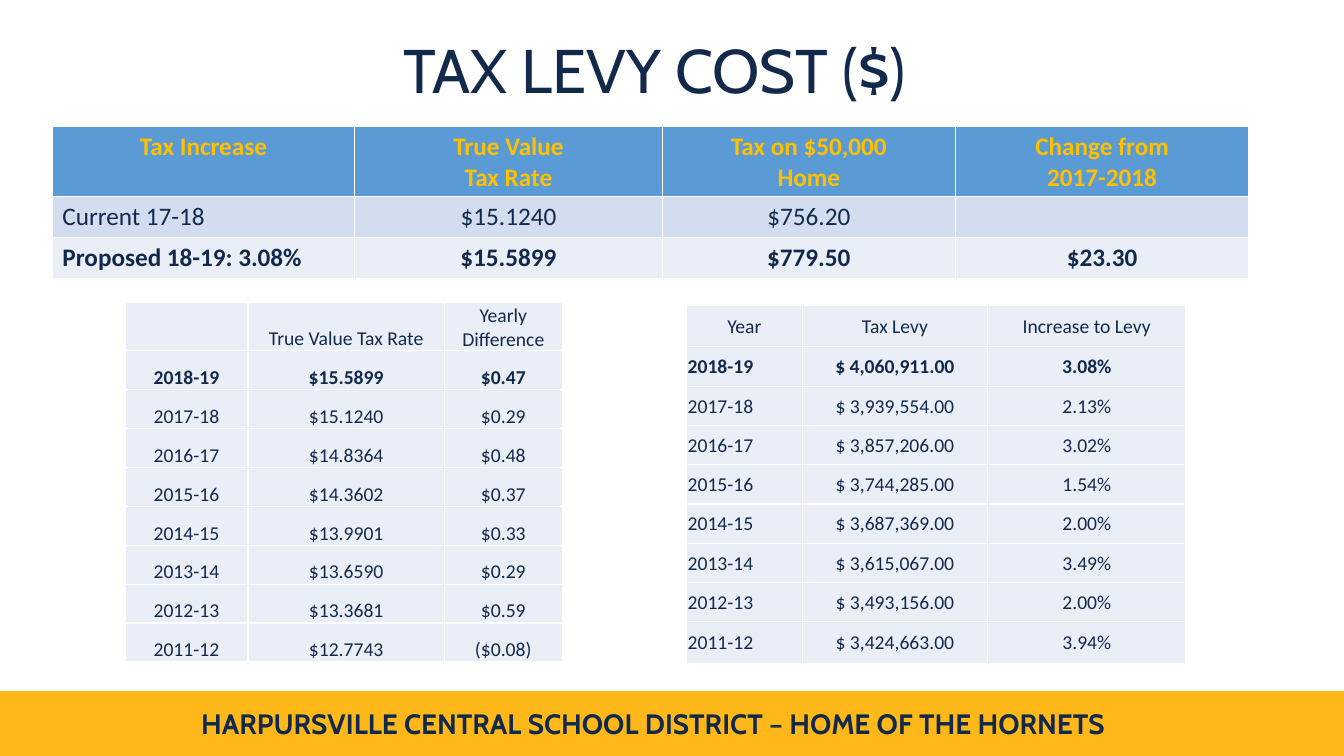
"""Tax levy cost slide with one summary table and two history tables."""
from dataclasses import dataclass

from pptx import Presentation
from pptx.dml.color import RGBColor
from pptx.enum.shapes import MSO_SHAPE
from pptx.enum.text import MSO_ANCHOR, PP_ALIGN
from pptx.util import Cm, Pt


@dataclass(frozen=True)
class Theme:
    navy: str = "13294B"
    gold: str = "FFB819"
    amber: str = "FFC000"
    blue: str = "5B9BD5"
    band: str = "D2DEEF"
    pale: str = "EAEFF7"
    white: str = "FFFFFF"
    head: str = "Cabin"
    body: str = "Calibri"
    title: int = 44
    foot: int = 20
    main: int = 18
    small: int = 14


THEME = Theme()

COSTS = [
    ("Tax Increase", "True Value\nTax Rate", "Tax on $50,000\nHome", "Change from\n2017-2018"),
    ("Current 17-18", "$15.1240", "$756.20", ""),
    ("Proposed 18-19: 3.08%", "$15.5899", "$779.50", "$23.30"),
]
RATES = [
    ("", "True Value Tax Rate", "Yearly Difference"),
    ("2018-19", "$15.5899", "$0.47"),
    ("2017-18", "$15.1240", "$0.29"),
    ("2016-17", "$14.8364", "$0.48"),
    ("2015-16", "$14.3602", "$0.37"),
    ("2014-15", "$13.9901", "$0.33"),
    ("2013-14", "$13.6590", "$0.29"),
    ("2012-13", "$13.3681", "$0.59"),
    ("2011-12", "$12.7743", "($0.08)"),
]
LEVIES = [
    ("Year", "Tax Levy", "Increase to Levy"),
    ("2018-19", "$ 4,060,911.00", "3.08%"),
    ("2017-18", "$ 3,939,554.00", "2.13%"),
    ("2016-17", "$ 3,857,206.00", "3.02%"),
    ("2015-16", "$ 3,744,285.00", "1.54%"),
    ("2014-15", "$ 3,687,369.00", "2.00%"),
    ("2013-14", "$ 3,615,067.00", "3.49%"),
    ("2012-13", "$ 3,493,156.00", "2.00%"),
    ("2011-12", "$ 3,424,663.00", "3.94%"),
]


def color(code):
    return RGBColor.from_string(code)


def style(frame, face, size, ink, bold=False, align=PP_ALIGN.CENTER):
    for para in frame.paragraphs:
        para.alignment = align
        for run in para.runs:
            font = run.font
            font.name, font.size, font.bold = face, Pt(size), bold
            font.color.rgb = color(ink)


def add_block(slide, place, fill, line=None):
    block = slide.shapes.add_shape(MSO_SHAPE.RECTANGLE, *map(Cm, place))
    block.shadow.inherit = False
    block.fill.solid()
    block.fill.fore_color.rgb = color(fill)
    if line:
        block.line.color.rgb = color(line)
        block.line.width = Pt(1)
    else:
        block.line.fill.background()
    return block


def add_title(slide, text):
    frame = add_block(slide, (1.9, 0.53, 29.21, 2.64), THEME.white).text_frame
    frame.word_wrap = True
    frame.vertical_anchor = MSO_ANCHOR.MIDDLE
    frame.text = text
    frame.paragraphs[0].line_spacing = 0.9
    style(frame, THEME.head, THEME.title, THEME.navy)


def add_footer(slide, text):
    add_block(slide, (0, 17.43, 33.87, 1.6), THEME.gold, THEME.gold)
    frame = slide.shapes.add_textbox(Cm(4.47), Cm(17.68), Cm(23.98), Cm(1.11)).text_frame
    frame.word_wrap = True
    frame.text = text
    style(frame, THEME.head, THEME.foot, THEME.navy, True)


def add_grid(slide, spot, wide, high, data):
    """Add an unstyled grid and return its table."""
    shape = slide.shapes.add_table(len(data), len(wide), *map(Cm, (*spot, sum(wide), sum(high))))
    table = shape.table
    table.horz_banding = False
    for col, width in zip(table.columns, wide):
        col.width = Cm(width)
    for row, height, texts in zip(table.rows, high, data):
        row.height = Cm(height)
        for cell, text in zip(row.cells, texts):
            cell.text_frame.text = text
            cell.fill.solid()
            cell.fill.fore_color.rgb = color(THEME.pale)
    return table


def add_costs(slide):
    table = add_grid(slide, (1.32, 3.18), (7.62, 7.75, 7.39, 7.39), (1.78, 1.03, 1.03), COSTS)
    fills = (THEME.blue, THEME.band, THEME.pale)
    for index, (row, fill) in enumerate(zip(table.rows, fills)):
        for place, cell in enumerate(row.cells):
            cell.fill.fore_color.rgb = color(fill)
            ink = THEME.navy if index else THEME.amber
            align = PP_ALIGN.LEFT if index and not place else PP_ALIGN.CENTER
            style(cell.text_frame, THEME.body, THEME.main, ink, index != 1, align)


def add_years(slide, spot, wide, high, data, anchor, first):
    """Add a history table whose latest year is bold."""
    table = add_grid(slide, spot, wide, high, data)
    table.first_row = False
    for index, row in enumerate(table.rows):
        for place, cell in enumerate(row.cells):
            cell.margin_left = cell.margin_right = cell.margin_top = Cm(0.03)
            cell.margin_bottom = 0
            cell.vertical_anchor = anchor
            align = first if index and not place else PP_ALIGN.CENTER
            style(cell.text_frame, THEME.body, THEME.small, THEME.navy, index == 1, align)


def main():
    deck = Presentation()
    deck.slide_width, deck.slide_height = Cm(33.87), Cm(19.05)
    slide = deck.slides.add_slide(deck.slide_layouts[6])
    add_footer(slide, "HARPURSVILLE CENTRAL SCHOOL DISTRICT – HOME OF THE HORNETS")
    add_costs(slide)
    add_title(slide, "TAX LEVY COST ($)")
    add_years(slide, (3.15, 7.62), (3.1, 4.95, 2.97), [1.22] + [0.98] * 8,
              RATES, MSO_ANCHOR.BOTTOM, PP_ALIGN.CENTER)
    add_years(slide, (17.3, 7.7), (2.92, 4.67, 5), [1.04] + [0.99] * 7 + [1.04],
              LEVIES, MSO_ANCHOR.MIDDLE, PP_ALIGN.LEFT)
    deck.save("out.pptx")


if __name__ == "__main__":
    main()
